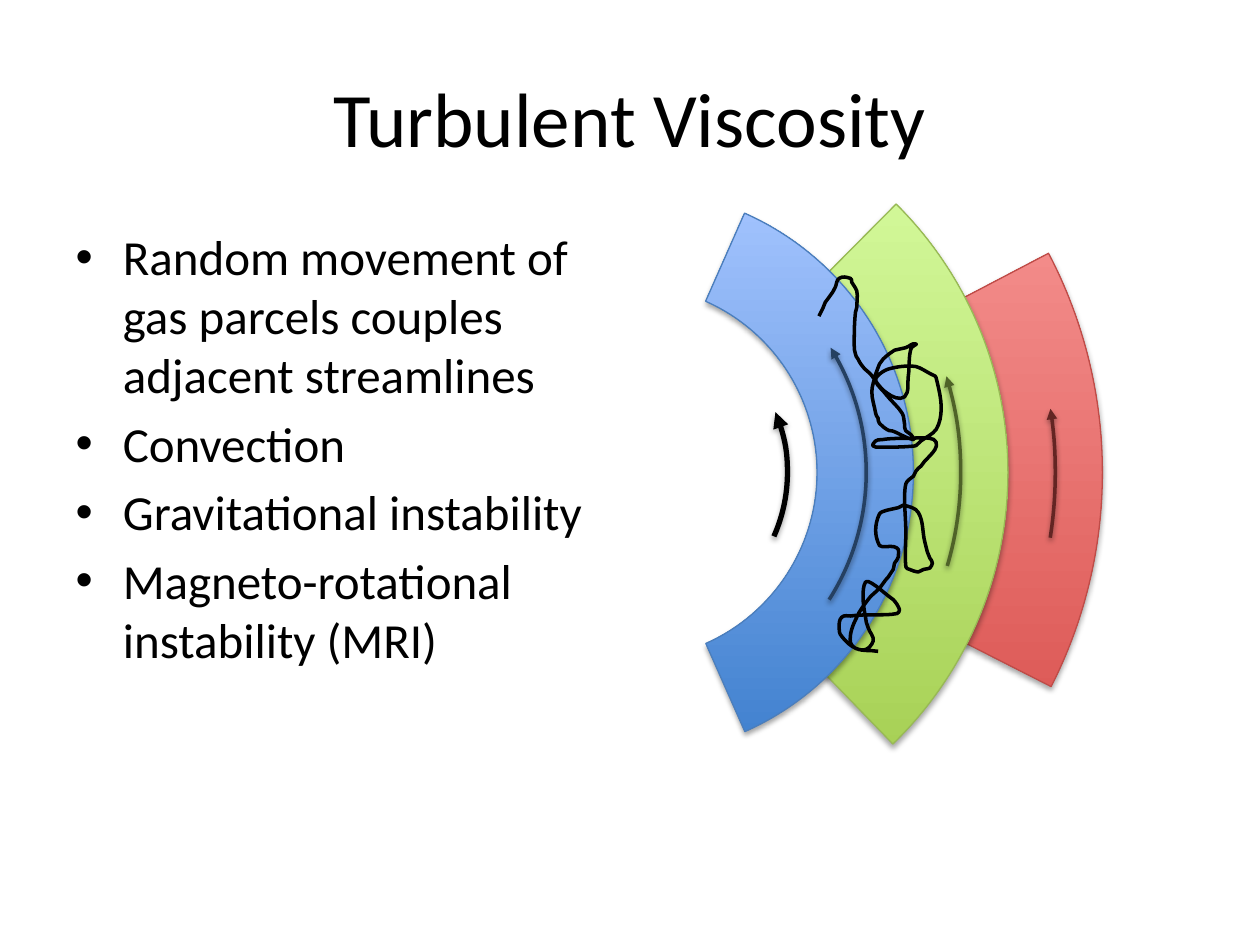
from math import dist
from lxml.etree import SubElement
from pptx import Presentation
from pptx.dml.color import RGBColor
from pptx.enum.shapes import MSO_SHAPE
from pptx.oxml.ns import qn
from pptx.util import Pt

TITLE = "Turbulent Viscosity"
BULLETS = [
    "Random movement of gas parcels couples adjacent streamlines",
    "Convection",
    "Gravitational instability",
    "Magneto-rotational instability (MRI)",
]
CENTER = (360, 270)

# radius, start and end angle, thickness ratio, bottom, top and line colour
RINGS = [
    (270, 332.37, 26.95, 0.107, "D1403C", "FFA6A5", "BF4C48"),
    (216, 314.76, 45.92, 0.137, "A0CA4A", "DAFFA5", "98B955"),
    (162, 293.85, 66.08, 0.17, "3F80CE", "A4C4FF", "4B7EBC"),
]
# radius, start and end angle, colour, width, shadow opacity, shadow distance
FLOW_ARROWS = [
    (90, 337.5, 23.93, "000000", 3, 35, 1.8),
    (189, 343.09, 16.4, "4F6228", 2, 38, 1.6),
    (243, 351.38, 8.82, "632523", 2, 38, 1.6),
    (135, 328.12, 32.56, "254061", 2, 38, 1.6),
]
# Path of a gas parcel, on a grid of 0.72 pt
GRID = 0.72
PARCEL_PATH = [
    (697, 517), (680, 515), (668, 505), (666, 498), (668, 490), (675, 489),
    (697, 488), (712, 487), (714, 484), (709, 476), (705, 473), (692, 463),
    (687, 462), (685, 474), (687, 490), (689, 498), (693, 509), (685, 516),
    (675, 510), (680, 490), (689, 476), (697, 468), (705, 458), (709, 452),
    (710, 447), (713, 442), (712, 435), (702, 434), (698, 433), (695, 421),
    (698, 408), (704, 405), (713, 403), (717, 401), (729, 407), (734, 430),
    (736, 438), (738, 443), (740, 447), (738, 451), (733, 452), (729, 454),
    (722, 452), (719, 450), (719, 423), (718, 396), (719, 384), (725, 378),
    (727, 374), (731, 370), (734, 366), (742, 357), (743, 351), (738, 348),
    (719, 348), (700, 349), (695, 350), (693, 354), (698, 355), (726, 354),
    (731, 350), (743, 341), (747, 324), (743, 300), (739, 297), (727, 291),
    (705, 293), (697, 298), (695, 303), (704, 314), (716, 328), (718, 337),
    (719, 342), (723, 345), (725, 349), (708, 342), (704, 341), (698, 336),
    (697, 332), (695, 328), (692, 311), (695, 297), (698, 289), (701, 285),
    (710, 278), (719, 276), (727, 273), (723, 277), (721, 298), (718, 315),
    (704, 312), (691, 297), (684, 290), (681, 285), (679, 281), (678, 274),
    (679, 248), (680, 244), (680, 231), (676, 224), (675, 221), (666, 221),
    (663, 228), (658, 236), (655, 240), (653, 245), (650, 251),
]


def rgb(value):
    return RGBColor.from_string(value)


def set_line(sp, color, width):
    sp.line.color.rgb = rgb(color)
    sp.line.width = Pt(width)


def add_shadow(sp, opacity, distance):
    sp.shadow.inherit = False
    effects = sp._element.spPr.find(qn("a:effectLst"))
    shadow = SubElement(effects, qn("a:outerShdw"), blurRad=str(Pt(3.1)),
                        dist=str(Pt(distance)), dir="5400000", rotWithShape="0")
    color = SubElement(shadow, qn("a:srgbClr"), val="000000")
    SubElement(color, qn("a:alpha"), val=str(opacity * 1000))


def add_concentric(shapes, kind, radius, *angles):
    """Add an arc shape around CENTER, with its angles in degrees."""
    x, y = CENTER
    sp = shapes.add_shape(kind, Pt(x - radius), Pt(y - radius),
                          Pt(2 * radius), Pt(2 * radius))
    for i, angle in enumerate(angles):
        sp.adjustments[i] = angle * 0.6  # 60000 units a degree, over 100000
    return sp


def add_ring(shapes, radius, start, end, thickness, bottom, top, line):
    sp = add_concentric(shapes, MSO_SHAPE.BLOCK_ARC, radius, start, end)
    sp.adjustments[2] = thickness
    sp.fill.gradient()
    sp.fill.gradient_angle = 90
    for stop, color in zip(sp.fill.gradient_stops, (bottom, top)):
        stop.color.rgb = rgb(color)
    set_line(sp, line, 0.75)
    add_shadow(sp, 35, 1.8)


def add_flow_arrow(shapes, radius, start, end, color, width, opacity, distance):
    sp = add_concentric(shapes, MSO_SHAPE.ARC, radius, start, end)
    sp.fill.background()
    set_line(sp, color, width)
    SubElement(sp.line._get_or_add_ln(), qn("a:headEnd"), type="triangle")
    add_shadow(sp, opacity, distance)


def control_points(points, i):
    """Bezier controls from point i to i + 1, tangent to the neighbours' chord."""
    def handle(j, sign):
        before, after = points[max(j - 1, 0)], points[min(j + 1, len(points) - 1)]
        scale = sign * dist(points[i], points[i + 1]) / 3 / (dist(before, after) or 1)
        return tuple(p + (b - a) * scale
                     for p, a, b in zip(points[j], before, after))
    return handle(i, 1), handle(i + 1, -1)


def add_smooth_path(shapes, points):
    builder = shapes.build_freeform(*points[0], scale=Pt(GRID))
    builder.add_line_segments(points[1:], close=False)
    sp = builder.convert_to_shape()
    left, top = (min(axis) for axis in zip(*points))
    for i, segment in enumerate(list(sp._element.iter(qn("a:lnTo")))):
        segment.tag = qn("a:cubicBezTo")
        end = segment[0]
        unit = Pt(GRID) if int(max(end.get("x"), end.get("y"), key=int)) > 1000 else 1
        for x, y in control_points(points, i):
            pt = SubElement(segment, qn("a:pt"), x=str(round((x - left) * unit)),
                            y=str(round((y - top) * unit)))
            end.addprevious(pt)
    sp.fill.background()
    set_line(sp, "000000", 2)
    sp.shadow.inherit = False


def place_text(sp, box, lines, size):
    sp.left, sp.top, sp.width, sp.height = map(Pt, box)
    tf = sp.text_frame
    tf.text = "\n".join(lines)
    for p in tf.paragraphs:
        for r in p.runs:
            r.font.size = Pt(size)
            r.font.name = "Calibri"
            r.font.color.rgb = rgb("000000")


def main():
    prs = Presentation()
    prs.slide_width, prs.slide_height = Pt(720), Pt(540)
    s = prs.slides.add_slide(prs.slide_layouts[1])
    title, body = s.placeholders
    place_text(title, (36, 21.6, 648, 90), [TITLE], 44)
    place_text(body, (36, 126, 318, 356.4), BULLETS, 28)
    for ring in RINGS:
        add_ring(s.shapes, *ring)
    for arrow in FLOW_ARROWS:
        add_flow_arrow(s.shapes, *arrow)
    add_smooth_path(s.shapes, PARCEL_PATH)
    prs.save("out.pptx")


if __name__ == "__main__":
    main()
